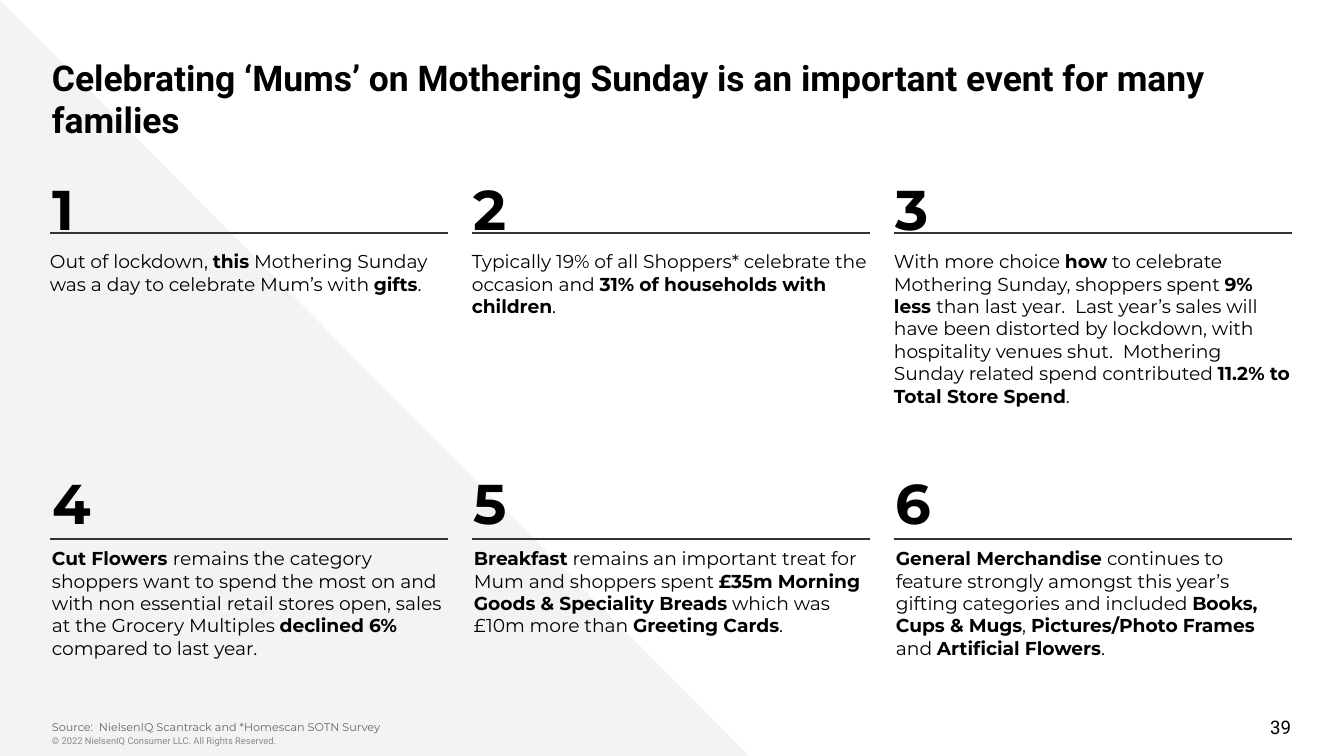
from lxml import etree
from pptx import Presentation
from pptx.dml.color import RGBColor
from pptx.enum.shapes import MSO_CONNECTOR as Connector, MSO_SHAPE as Shape
from pptx.enum.text import MSO_ANCHOR as Anchor, PP_ALIGN as Align
from pptx.oxml.ns import qn
from pptx.util import Pt

EMU_PER_PX = 914400 / 134.4
PAGE_WIDTH, PAGE_HEIGHT = 1344, 756
HEADING_FONT, BODY_FONT = "Roboto", "Montserrat"
BLACK, RULE_GREY, PANEL_GREY = "000000", "333333", "F3F3F3"
SOURCE_GREY, COPYRIGHT_GREY = "666666", "888888"

# Grid of numbered points
LEFT, COLUMN_PITCH, COLUMNS = 52, 422, 3
BODY_WIDTH, BODY_HEIGHT = 396, 173
# Per row: number top, rule y, body top, body shift from the column's left
ROWS = [(175, 233, 243, -2), (469, 539, 540, 0)]

# A vertical bar switches bold on and off
POINTS = [
    "Out of lockdown, |this| Mothering Sunday was a day to celebrate Mum’s with |gifts|.",
    "Typically 19% of all Shoppers* celebrate the occasion and "
    "|31% of households with children|.",
    "With more choice |how| to celebrate Mothering Sunday, shoppers spent |9% less |"
    "than last year.  Last year’s sales will have been distorted by lockdown, with "
    "hospitality venues shut.  Mothering Sunday related spend contributed "
    "|11.2% to Total Store Spend|.",
    "|Cut Flowers |remains the category shoppers want to spend the most on and with "
    "non essential retail stores open, sales at the Grocery Multiples "
    "|declined 6%| compared to last year.",
    "|Breakfast| remains an important treat for Mum and shoppers spent "
    "|£35m Morning Goods & Speciality Breads| which was £10m more than |Greeting Cards|.",
    "|General Merchandise |continues to feature strongly amongst this year’s gifting "
    "categories and included |Books, Cups & Mugs|, |Pictures/Photo Frames |and "
    "|Artificial Flowers|.",
]


def px(length):
    return round(length * EMU_PER_PX)


def color(value):
    return RGBColor.from_string(value)


def add_text(page, left, top, width, height, text, size, font=BODY_FONT, fill=BLACK,
             inset_top=7, inset_bottom=7, anchor=Anchor.TOP, align=Align.LEFT):
    box = page.shapes.add_textbox(px(left), px(top), px(width), px(height))
    frame = box.text_frame
    frame.word_wrap = True
    frame.vertical_anchor = anchor
    frame.margin_left = frame.margin_right = 0
    frame.margin_top, frame.margin_bottom = px(inset_top), px(inset_bottom)
    para = frame.paragraphs[0]
    para.alignment = align
    for index, part in enumerate(text.split("|")):
        if part:
            span = para.add_run()
            span.text = part
            span.font.name = font
            span.font.size = Pt(size)
            span.font.bold = index % 2 == 1
            span.font.color.rgb = color(fill)


def add_rule(page, left, y, width):
    rule = page.shapes.add_connector(
        Connector.STRAIGHT, px(left), px(y), px(left + width), px(y))
    rule.line.color.rgb = color(RULE_GREY)
    rule.line.width = Pt(0.75)
    etree.SubElement(rule._element.spPr, qn("a:effectLst"))


def add_backdrop(page):
    triangle = page.shapes.add_shape(Shape.RIGHT_TRIANGLE, 0, 0, px(751), px(758))
    triangle.shadow.inherit = False
    triangle.fill.solid()
    triangle.fill.fore_color.rgb = color(PANEL_GREY)
    triangle.line.fill.background()


def add_point(page, index, text):
    row, column = divmod(index, COLUMNS)
    number_top, rule_y, body_top, body_shift = ROWS[row]
    left = LEFT + column * COLUMN_PITCH
    add_text(page, left, number_top, 228, 78, f"|{index + 1}|", 30, inset_top=0)
    add_rule(page, left - 2, rule_y, 398)
    add_text(page, left + body_shift, body_top, BODY_WIDTH, BODY_HEIGHT, text, 10)


def main():
    deck = Presentation()
    deck.slide_width, deck.slide_height = px(PAGE_WIDTH), px(PAGE_HEIGHT)
    page = deck.slides.add_slide(deck.slide_layouts[6])

    # Backdrop and title
    add_backdrop(page)
    add_text(page, LEFT, 43, 1239, 58,
             "|Celebrating ‘Mums’ on Mothering Sunday is an important event "
             "for many families|",
             19, HEADING_FONT, inset_top=13, inset_bottom=13)

    # Six numbered points
    for index, text in enumerate(POINTS):
        add_point(page, index, text)

    # Footer
    add_text(page, LEFT, 714, 1199, 27,
             "Source:  NielsenIQ Scantrack and *Homescan SOTN Survey", 6,
             fill=SOURCE_GREY, inset_top=13, inset_bottom=13, anchor=Anchor.BOTTOM)
    add_text(page, LEFT, 730, 745, 27,
             "© 2022 NielsenIQ Consumer LLC. All Rights Reserved.", 5,
             HEADING_FONT, COPYRIGHT_GREY)
    add_text(page, 989, 707, 302, 40, "39", 10, HEADING_FONT,
             anchor=Anchor.MIDDLE, align=Align.RIGHT)

    deck.save("out.pptx")


if __name__ == "__main__":
    main()
